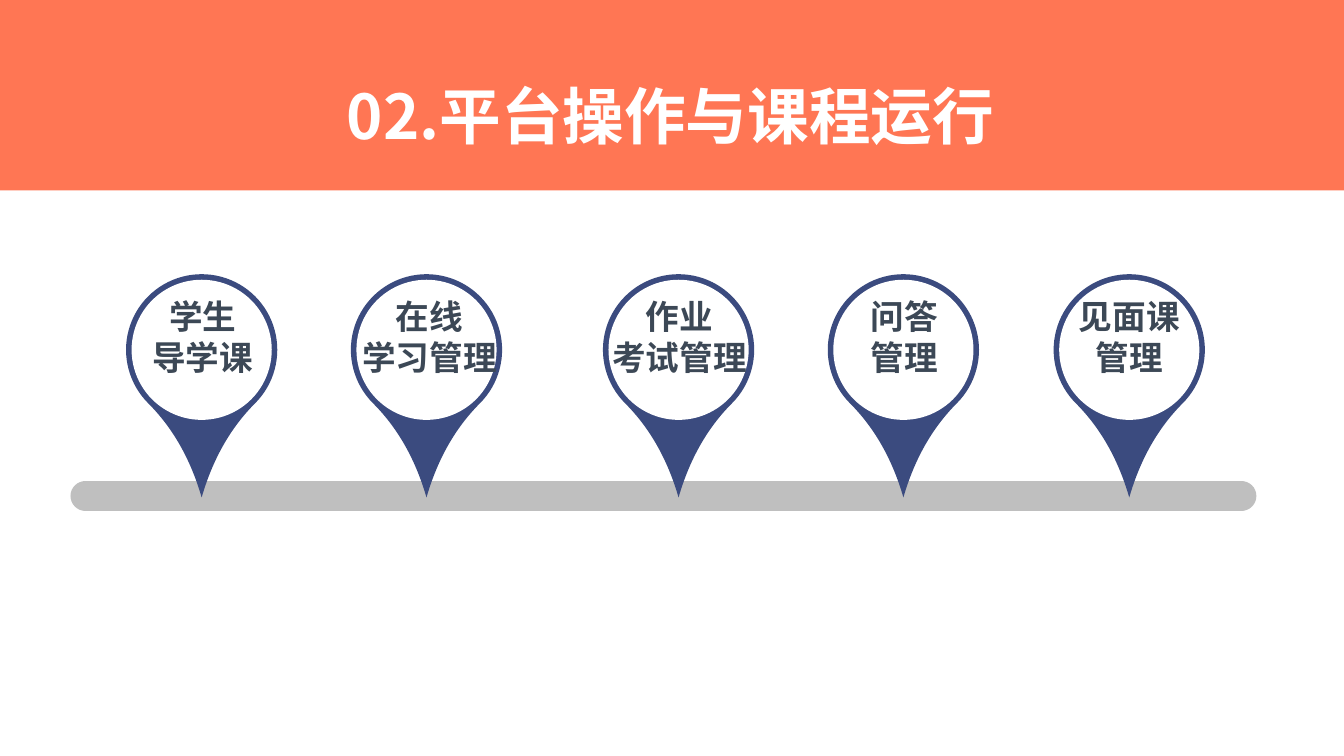
from lxml import etree
from pptx import Presentation
from pptx.dml.color import RGBColor
from pptx.enum import shapes, text
from pptx.oxml import ns
from pptx.util import Inches, Pt

TITLE = "02.平台操作与课程运行"
# Pin centre, label centre, label lines
STOPS = [
    (2.0, 2.01, ("学生", "导学课")),
    (4.23, 4.26, ("在线", "学习管理")),
    (6.73, 6.74, ("作业", "考试管理")),
    (8.96, 8.97, ("问答", "管理")),
    (11.2, 11.2, ("见面课", "管理")),
]
FONT = "Noto Sans CJK SC"
ORANGE, NAVY, WHITE, GREY, SLATE = "FF7654", "3B4B7F", "FFFFFF", "BFBFBF", "3C4856"
PIN_MIDDLE, PIN_SIZE, HOLE_SIZE = 3.47, 1.5, 1.39
ROAD_Y = 4.92
LABEL_TOP, LABEL_WIDTH, LABEL_HEIGHT = 2.89, 1.62, 0.91

prs = Presentation()
prs.slide_width, prs.slide_height = Inches(13.33), Inches(7.5)
slide = prs.slides.add_slide(prs.slide_layouts[6])


def paint(color_format, color):
    color_format.rgb = RGBColor.from_string(color)


def add_filled(kind, left, top, width, height, color):
    shape = slide.shapes.add_shape(
        kind, Inches(left), Inches(top), Inches(width), Inches(height))
    shape.shadow.inherit = False
    shape.fill.solid()
    paint(shape.fill.fore_color, color)
    shape.line.fill.background()
    return shape


def add_centred(kind, centre, size, color):
    return add_filled(kind, centre - size / 2, PIN_MIDDLE - size / 2, size, size, color)


def add_text(left, top, width, height, lines, size, color, align, wrap):
    box = slide.shapes.add_textbox(
        Inches(left), Inches(top), Inches(width), Inches(height))
    frame = box.text_frame
    frame.word_wrap = wrap
    for i, line in enumerate(lines):
        paragraph = frame.add_paragraph() if i else frame.paragraphs[0]
        paragraph.alignment = align
        run = paragraph.add_run()
        run.text = line
        run.font.size, run.font.bold, run.font.name = Pt(size), True, FONT
        paint(run.font.color, color)
        east_asian = etree.SubElement(run.font._element, ns.qn("a:ea"))
        east_asian.set("typeface", FONT)


road = slide.shapes.add_connector(
    shapes.MSO_CONNECTOR.STRAIGHT,
    Inches(0.85), Inches(ROAD_Y), Inches(12.31), Inches(ROAD_Y))
road.line.width = Pt(21.75)
paint(road.line.color, GREY)
road.line._ln.set("cap", "rnd")
etree.SubElement(road._element.spPr, ns.qn("a:effectLst"))

add_filled(shapes.MSO_SHAPE.RECTANGLE, 0, 0, 13.33, 1.89, ORANGE)
add_text(3.34, 0.72, 6.8, 0.84, [TITLE], 44, WHITE, text.PP_ALIGN.LEFT, False)

for pin_centre, label_centre, label in STOPS:
    pin = add_centred(shapes.MSO_SHAPE.TEAR, pin_centre, PIN_SIZE, NAVY)
    pin.adjustments[0] = 1.381
    pin.rotation = 135
    add_centred(shapes.MSO_SHAPE.OVAL, pin_centre, HOLE_SIZE, WHITE)
    add_text(label_centre - LABEL_WIDTH / 2, LABEL_TOP, LABEL_WIDTH, LABEL_HEIGHT,
             label, 24, SLATE, text.PP_ALIGN.CENTER, True)

prs.save("out.pptx")
